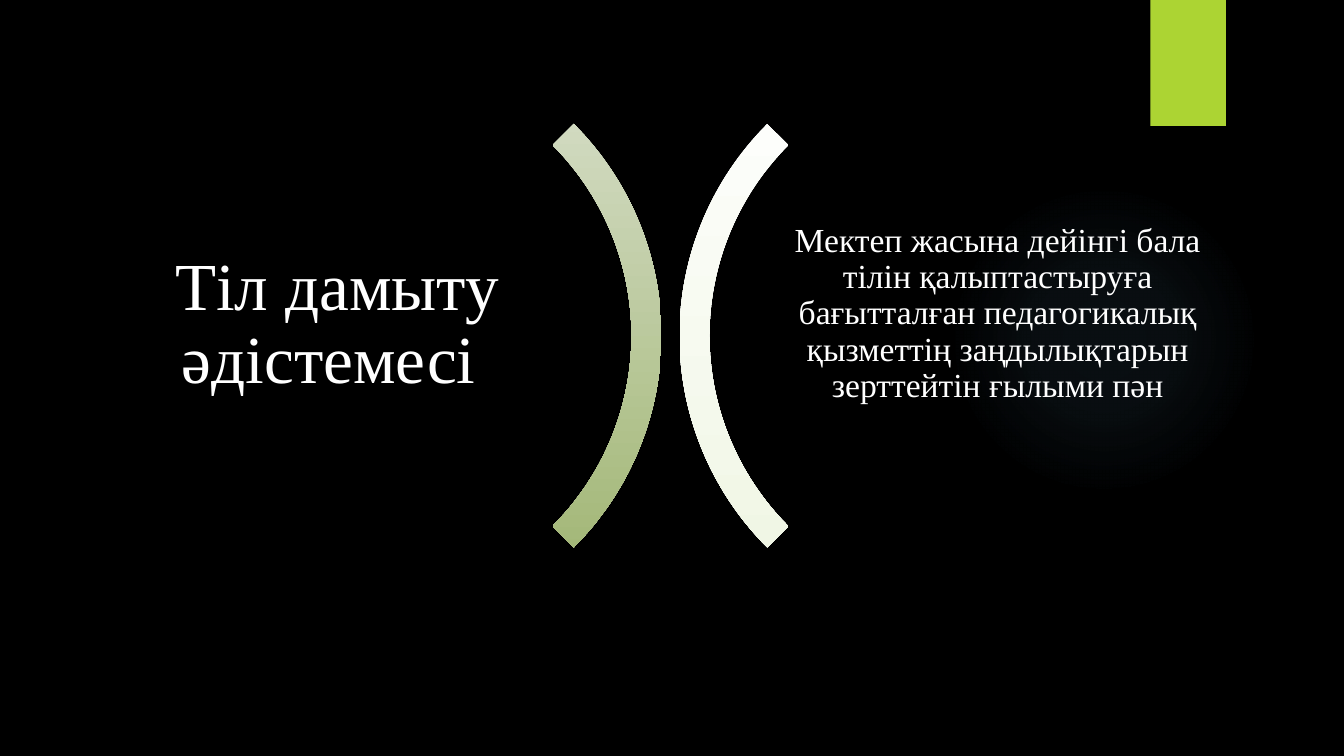
import pptx
import pptx.util
import pptx.dml.color
import pptx.enum.shapes
import pptx.enum.text
import pptx.oxml
import pptx.oxml.ns

Inches = pptx.util.Inches
RGBColor = pptx.dml.color.RGBColor
Shape = pptx.enum.shapes.MSO_SHAPE

BLACK = RGBColor(0x00, 0x00, 0x00)
WHITE = RGBColor(0xFF, 0xFF, 0xFF)
LIME = RGBColor(0xAC, 0xD4, 0x33)
GLOW_BLUE = RGBColor(0x7A, 0xC4, 0xF0)
PALE_SAGE = RGBColor(0xDA, 0xE1, 0xCE)
SAGE = RGBColor(0x9B, 0xB1, 0x6B)
IVORY = RGBColor(0xEE, 0xF5, 0xE1)

VERTICAL = '<a:lin ang="5400000" scaled="0"/>'
RADIAL = ('<a:path path="circle"><a:fillToRect l="50000" t="50000" '
          'r="50000" b="50000"/></a:path>')


class SlideBuilder:
    font_name = "Times New Roman"
    line_spacing = 0.9

    def __init__(self, slide):
        self.slide = slide

    def background(self, color):
        fill = self.slide.background.fill
        fill.solid()
        fill.fore_color.rgb = color

    def shape(self, kind, left, top, width, height, color=None):
        shape = self.slide.shapes.add_shape(
            kind, Inches(left), Inches(top), Inches(width), Inches(height))
        shape.shadow.inherit = False
        shape.line.fill.background()
        if color is not None:
            shape.fill.solid()
            shape.fill.fore_color.rgb = color
        return shape

    def gradient(self, shape, stops, direction):
        stop_xml = "".join(
            f'<a:gs pos="{position * 1000}"><a:srgbClr val="{color}">'
            f'<a:alpha val="{opacity * 1000}"/></a:srgbClr></a:gs>'
            for position, color, opacity in stops)
        gradient = pptx.oxml.parse_xml(
            f'<a:gradFill {pptx.oxml.ns.nsdecls("a")} rotWithShape="0">'
            f'<a:gsLst>{stop_xml}</a:gsLst>{direction}</a:gradFill>')
        shape.fill.background()
        properties = shape._element.spPr
        properties.replace(properties.find(pptx.oxml.ns.qn("a:noFill")), gradient)

    def glow(self, left, top, size):
        ellipse = self.shape(Shape.OVAL, left, top, size, size)
        stops = [(0, GLOW_BLUE, 7), (36, GLOW_BLUE, 6), (69, GLOW_BLUE, 0)]
        self.gradient(ellipse, stops, RADIAL)

    def arc(self, left, rotation, top_color, bottom_color):
        arc = self.shape(Shape.BLOCK_ARC, left, 0.36, 5.94, 5.94)
        arc.rotation = rotation
        for index, value in enumerate((135, 189, 0.05)):
            arc.adjustments[index] = value
        self.gradient(arc, [(0, top_color, 100), (100, bottom_color, 100)], VERTICAL)

    def text(self, text, left, top, size, inset, width=4.51, height=1.19, color=WHITE):
        box = self.slide.shapes.add_textbox(
            Inches(left), Inches(top), Inches(width), Inches(height))
        frame = box.text_frame
        frame.word_wrap = True
        frame.vertical_anchor = pptx.enum.text.MSO_ANCHOR.MIDDLE
        frame.margin_left = frame.margin_right = Inches(inset)
        frame.margin_top = frame.margin_bottom = Inches(inset)
        paragraph = frame.paragraphs[0]
        paragraph.alignment = pptx.enum.text.PP_ALIGN.CENTER
        paragraph.line_spacing = self.line_spacing
        run = paragraph.add_run()
        run.text = text
        run.font.name = self.font_name
        run.font.size = pptx.util.Pt(size)
        run.font.color.rgb = color


def main():
    presentation = pptx.Presentation()
    presentation.slide_width = Inches(13.33)
    presentation.slide_height = Inches(7.5)
    builder = SlideBuilder(presentation.slides.add_slide(presentation.slide_layouts[6]))

    builder.background(BLACK)
    builder.glow(9.41, 1.83, 3.08)
    builder.shape(Shape.RECTANGLE, 11.41, 0, 0.75, 1.25, LIME)
    builder.arc(0.62, 90, PALE_SAGE, SAGE)
    builder.arc(6.74, 270, WHITE, IVORY)
    builder.text(
        "Мектеп жасына дейінгі бала тілін қалыптастыруға бағытталған "
        "педагогикалық қызметтің заңдылықтарын зерттейтін ғылыми пән",
        7.64, 2.52, size=24, inset=0.1)
    builder.text("Тіл дамыту әдістемесі ", 1.09, 2.63, size=48, inset=0.2)

    presentation.save("out.pptx")


if __name__ == "__main__":
    main()
